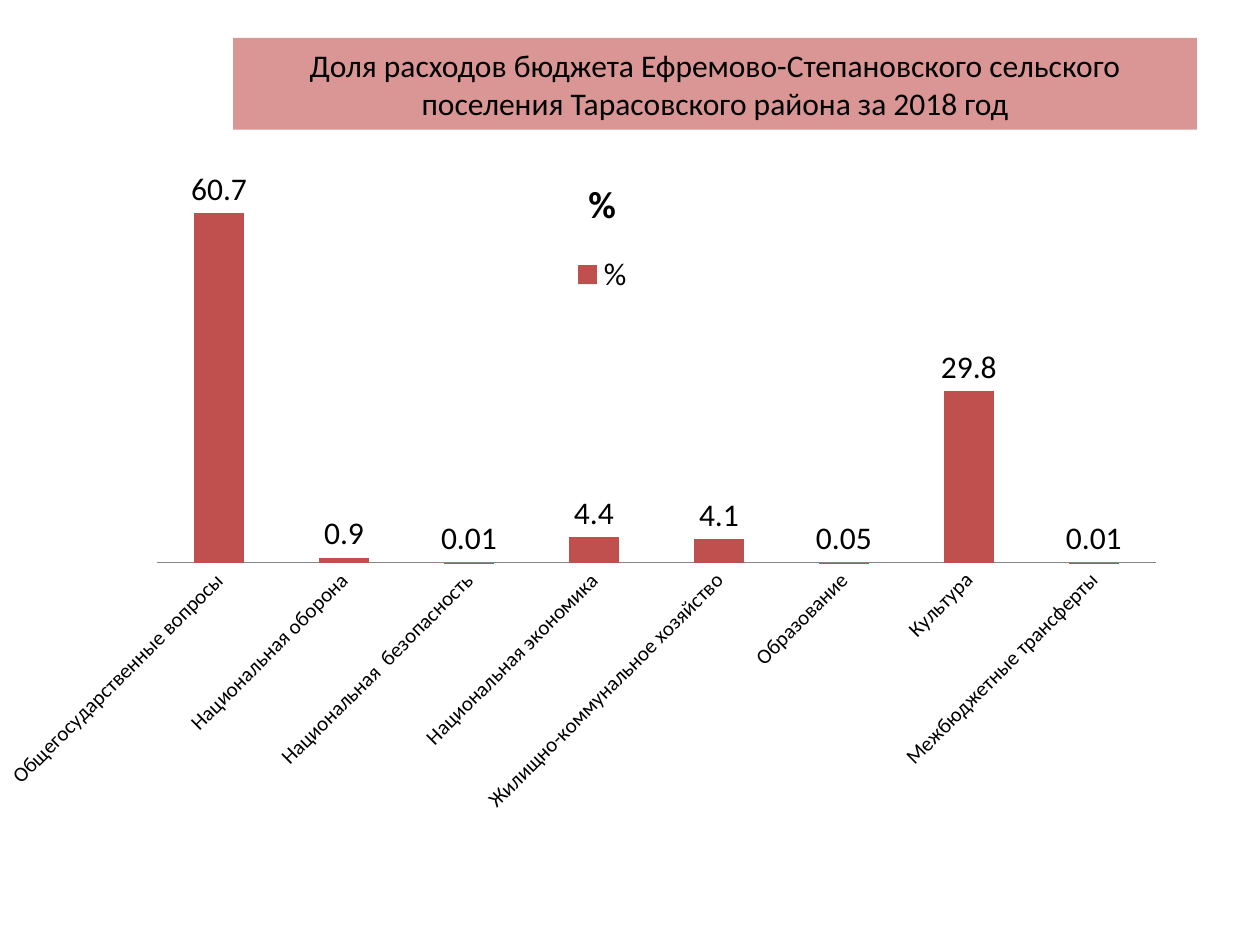
from lxml import etree
from pptx import Presentation
from pptx import util as u
from pptx.chart import data as cd
from pptx.dml.color import RGBColor
from pptx.enum import chart as ch, shapes, text
from pptx.oxml import ns

BLACK = RGBColor(0x00, 0x00, 0x00)
GREY = RGBColor(0x86, 0x86, 0x86)
PINK = RGBColor(0xD9, 0x96, 0x94)
RED = RGBColor(0xC0, 0x50, 0x4D)

HEADING = ("Доля расходов бюджета Ефремово-Степановского сельского "
           "поселения Тарасовского района за 2018 год")
SHARES = {
    "Общегосударственные вопросы": 60.7,
    "Национальная оборона": 0.9,
    "Национальная  безопасность": 0.01,
    "Национальная экономика": 4.4,
    "Жилищно-коммунальное хозяйство": 4.1,
    "Образование": 0.05,
    "Культура": 29.8,
    "Межбюджетные трансферты": 0.01,
}


class Deck:
    face = "Calibri"
    size = 18

    def __init__(self, width, height):
        self.prs = Presentation()
        self.prs.slide_width, self.prs.slide_height = u.Pt(width), u.Pt(height)
        self.s = self.prs.slides.add_slide(self.prs.slide_layouts[6])

    def font(self, f, size=None, bold=False):
        f.name, f.size, f.bold = self.face, u.Pt(size or self.size), bold
        f.color.rgb = BLACK

    def banner(self, box, words, fill):
        sp = self.s.shapes.add_shape(shapes.MSO_SHAPE.RECTANGLE, *map(u.Pt, box))
        sp.shadow.inherit = False
        sp.fill.solid()
        sp.fill.fore_color.rgb = fill
        sp.line.fill.background()
        tf = sp.text_frame
        tf.word_wrap = True
        tf.vertical_anchor = text.MSO_ANCHOR.MIDDLE
        p = tf.paragraphs[0]
        p.alignment = text.PP_ALIGN.CENTER
        r = p.add_run()
        r.text = words
        self.font(r.font)

    def columns(self, box, name, values, fill, top, plot):
        data = cd.CategoryChartData()
        data.categories = list(values)
        data.add_series(name, list(values.values()))
        chart = self.s.shapes.add_chart(
            ch.XL_CHART_TYPE.COLUMN_CLUSTERED, *map(u.Pt, box), data).chart
        self.font(chart.font)

        r = chart.chart_title.text_frame.paragraphs[0].add_run()
        r.text = name
        self.font(r.font, 21.6, True)
        chart.has_legend = True
        chart.legend.position = ch.XL_LEGEND_POSITION.TOP
        chart.legend.include_in_layout = False
        self.font(chart.legend.font)

        val = chart.value_axis
        val.minimum_scale, val.maximum_scale = 0, top
        val.has_major_gridlines = False
        val.visible = False
        cat = chart.category_axis
        cat.major_tick_mark = ch.XL_TICK_MARK.NONE
        cat.format.line.color.rgb = GREY
        cat.format.line.width = u.Pt(0.75)
        self.font(cat.tick_labels.font, 12)
        body = cat._element.find(ns.qn("c:txPr")).find(ns.qn("a:bodyPr"))
        body.set("rot", "-2700000")
        body.set("vert", "horz")

        bars = chart.plots[0]
        bars.gap_width = 150
        bars.vary_by_categories = False
        series = bars.series[0]
        series.format.fill.solid()
        series.format.fill.fore_color.rgb = fill
        labels = series.data_labels
        labels.show_value = True
        labels.position = ch.XL_LABEL_POSITION.OUTSIDE_END
        self.font(labels.font)
        self.place_plot(chart, plot)

    def place_plot(self, chart, plot):
        area = chart._chartSpace.chart.plotArea
        for old in area.findall(ns.qn("c:layout")):
            area.remove(old)
        layout = etree.Element(ns.qn("c:layout"))
        manual = etree.SubElement(layout, ns.qn("c:manualLayout"))
        parts = [("layoutTarget", "inner"), ("xMode", "edge"), ("yMode", "edge")]
        for tag, value in parts + list(zip("xywh", plot)):
            etree.SubElement(manual, ns.qn("c:" + tag)).set("val", str(value))
        area.insert(0, layout)

    def save(self):
        self.prs.save("out.pptx")


def main():
    deck = Deck(720, 540)
    deck.banner((133.2, 21.6, 550.8, 52.56), HEADING, PINK)
    deck.columns((0, 84.24, 688.32, 455.76), "%", SHARES, RED, 70,
                 (0.13, 0.015, 0.83, 0.506))
    deck.save()


if __name__ == "__main__":
    main()
